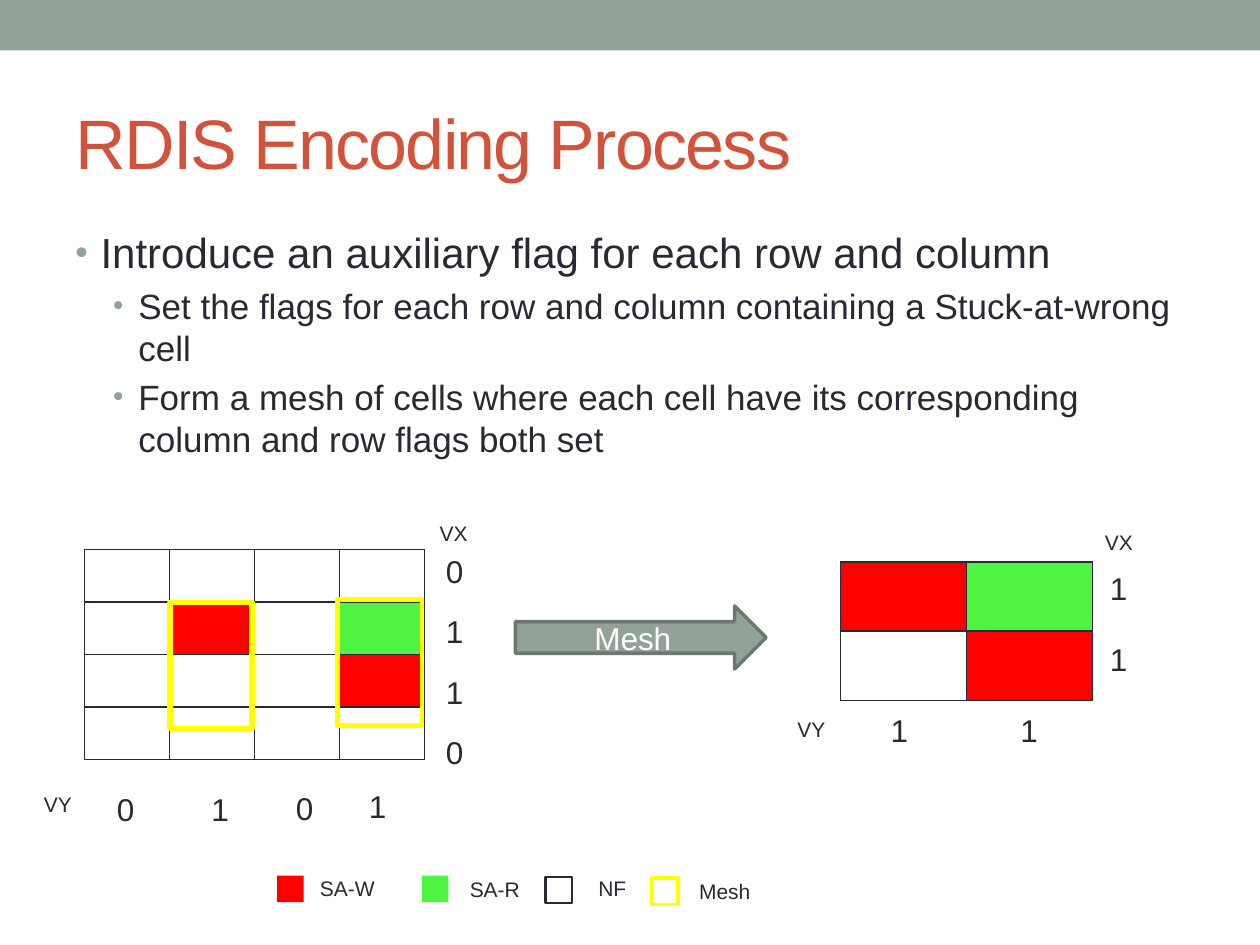
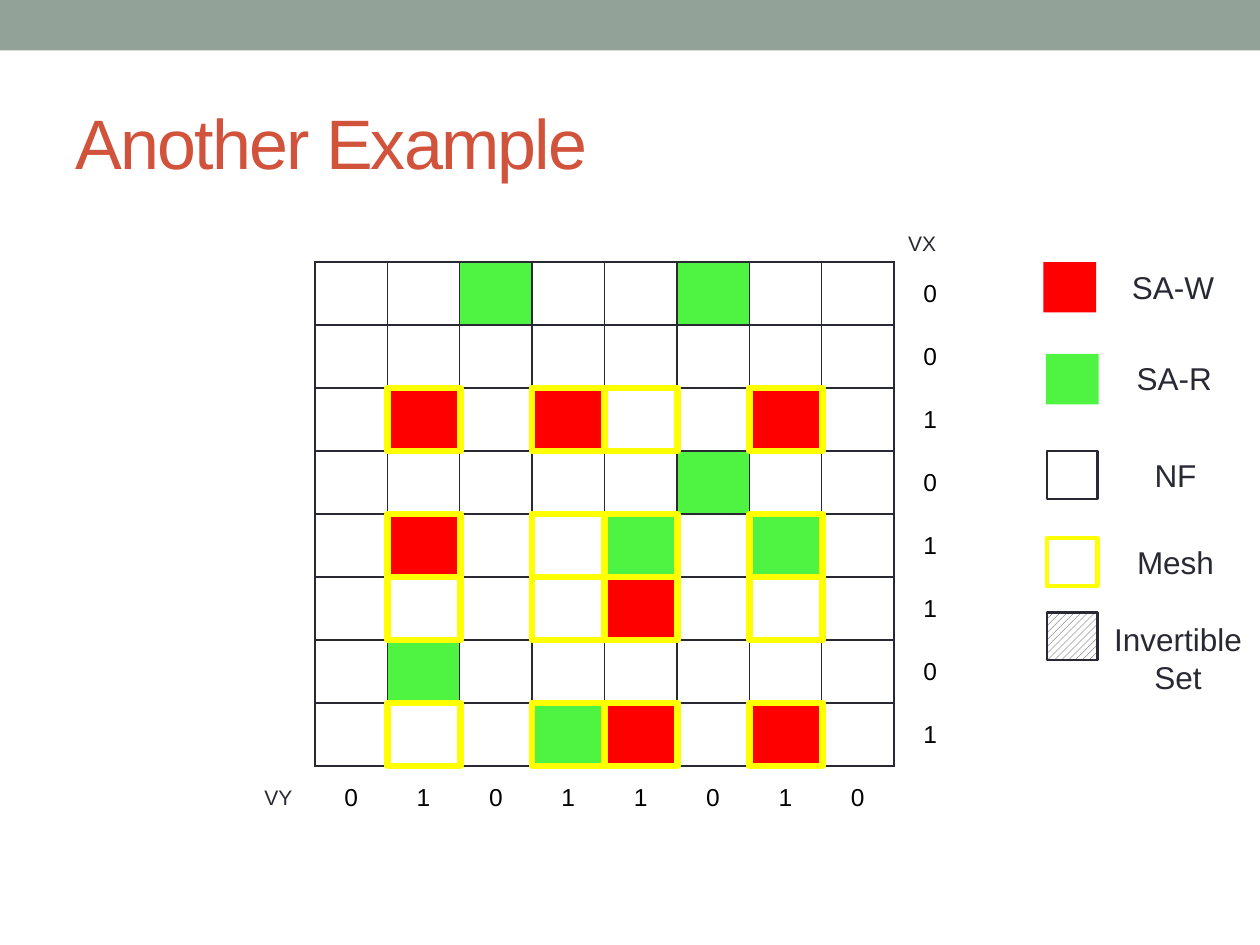
"""Builds two slides that explain how RDIS encodes stuck cells with a mesh."""
from dataclasses import dataclass
from itertools import product

from lxml.etree import SubElement
from pptx import Presentation
from pptx.dml.color import RGBColor
from pptx.enum.dml import MSO_PATTERN
from pptx.enum.shapes import MSO_SHAPE
from pptx.enum.text import MSO_ANCHOR, MSO_AUTO_SIZE, PP_ALIGN
from pptx.oxml.ns import qn
from pptx.util import Inches, Pt


@dataclass(frozen=True)
class Theme:
    font: str = "Arial"
    ink: RGBColor = RGBColor.from_string("292934")
    sage: RGBColor = RGBColor.from_string("93A299")
    sage_dark: RGBColor = RGBColor.from_string("6D7871")
    rust: RGBColor = RGBColor.from_string("D2533C")
    white: RGBColor = RGBColor.from_string("FFFFFF")
    black: RGBColor = RGBColor.from_string("000000")
    wrong: RGBColor = RGBColor.from_string("FF0000")
    right: RGBColor = RGBColor.from_string("4FF442")
    mesh: RGBColor = RGBColor.from_string("FFFF00")
    title: int = 40
    lead: int = 24
    point: int = 20
    label: int = 18
    flag: int = 14
    small: int = 12


theme = Theme()


def add_text(page, text, left, top, width, height=0.4, size=theme.label, align=PP_ALIGN.LEFT):
    """Adds a wrapped text box, one paragraph for each line, and returns its paragraphs."""
    box = page.shapes.add_textbox(Inches(left), Inches(top), Inches(width), Inches(height))
    frame = box.text_frame
    frame.word_wrap = True
    frame.text = text
    for para in frame.paragraphs:
        para.alignment = align
        para.font.name = theme.font
        para.font.size = Pt(size)
        para.font.color.rgb = theme.ink
    return frame.paragraphs


def add_block(page, left, top, width, height, fill=None, line=None, weight=1.0, kind=MSO_SHAPE.RECTANGLE):
    """Adds a flat preset shape with an optional fill and outline."""
    block = page.shapes.add_shape(kind, Inches(left), Inches(top), Inches(width), Inches(height))
    block.shadow.inherit = False
    if fill is None:
        block.fill.background()
    else:
        block.fill.solid()
        block.fill.fore_color.rgb = fill
    if line is None:
        block.line.fill.background()
    else:
        block.line.color.rgb = line
        block.line.width = Pt(weight)
    return block


deck = Presentation()
deck.slide_width, deck.slide_height = Inches(10), Inches(7.5)

pages = []
for heading in ("RDIS Encoding Process", "Another Example"):
    page = deck.slides.add_slide(deck.slide_layouts[5])
    pages.append(page)
    add_block(page, 0, 0, 10, 0.4, theme.sage)
    title = page.shapes.title
    title.left, title.top, title.width, title.height = Inches(0.5), Inches(0.58), Inches(9), Inches(1.08)
    title.text = heading
    title.text_frame.vertical_anchor = MSO_ANCHOR.MIDDLE
    title.text_frame.auto_size = MSO_AUTO_SIZE.NONE
    para = title.text_frame.paragraphs[0]
    para.alignment = PP_ALIGN.LEFT
    span = para.runs[0]
    span.font.name = theme.font
    span.font.size = Pt(theme.title)
    span.font.color.rgb = theme.rust
    span.font._element.set("spc", "-100")
process, example = pages

points = add_text(
    process,
    "Introduce an auxiliary flag for each row and column\n"
    "Set the flags for each row and column containing a Stuck-at-wrong cell\n"
    "Form a mesh of cells where each cell have its corresponding column and row flags both set",
    0.5, 1.75, 9, 2.2, theme.point,
)
points[0].font.size = Pt(theme.lead)
for index, para in enumerate(points):
    para.level = min(index, 1)
    para.space_before = Pt(para.font.size.pt * 0.2)
    props = para._p.get_or_add_pPr()
    props.set("marL", str(Inches(0.5 if para.level else 0.2)))
    props.set("indent", str(Inches(-0.2)))
    bullet_color = SubElement(props, qn("a:buClr"))
    SubElement(bullet_color, qn("a:srgbClr"), val=str(theme.sage))
    SubElement(props, qn("a:buSzPct"), val="85000")
    SubElement(props, qn("a:buFont"), typeface=theme.font)
    SubElement(props, qn("a:buChar"), char="•")
    props.append(props.find(qn("a:defRPr")))

example_cells = [
    "NNRNNRNN0",
    "NNNNNNNN0",
    "NWNWNNWN1",
    "NNNNNRNN0",
    "NWNNRNRN1",
    "NNNNWNNN1",
    "NRNNNNNN0",
    "NNNRWNWN1",
    "01011010 ",
]
grids = [
    (process, 0.67, 4.36, 2.7, 1.67, ["NNNN", "NWNR", "NNNW", "NNNN"]),
    (process, 6.67, 4.46, 2, 1.1, ["WR", "NW"]),
    (example, 2.5, 2.08, 5.17, 4.5, example_cells),
]
state_fills = {"W": theme.wrong, "R": theme.right}
for page, left, top, width, height, cells in grids:
    table = page.shapes.add_table(
        len(cells), len(cells[0]), Inches(left), Inches(top), Inches(width), Inches(height)
    ).table
    table.first_row = table.horz_banding = False
    table._tbl.tblPr.find(qn("a:tableStyleId")).text = "{2D5ABB26-0587-4C30-8999-92F81FD0307C}"
    for row, states in enumerate(cells):
        for column, state in enumerate(states):
            cell = table.cell(row, column)
            cell.vertical_anchor = MSO_ANCHOR.MIDDLE
            para = cell.text_frame.paragraphs[0]
            para.alignment = PP_ALIGN.CENTER
            para.font.name = theme.font
            para.font.size = Pt(theme.flag)
            para.font.color.rgb = theme.black
            if state in "01":
                para.text = state
            if state in "NWR":
                for side in ("a:lnL", "a:lnR", "a:lnT", "a:lnB"):
                    border = SubElement(cell._tc.get_or_add_tcPr(), qn(side), w=str(Pt(1)))
                    SubElement(SubElement(border, qn("a:solidFill")), qn("a:srgbClr"), val=str(theme.ink))
            if state in state_fills:
                cell.fill.solid()
                cell.fill.fore_color.rgb = state_fills[state]
            else:
                cell.fill.background()

flag_columns = [
    ("0110", 3.44, 4.33, 0.48),
    ("11", 8.71, 4.47, 0.56),
]
for flags, left, top, step in flag_columns:
    for index, flag in enumerate(flags):
        add_text(process, flag, left, top + index * step, 0.33)
flag_row = [("0", 0.83, 6.22), ("1", 1.58, 6.22), ("0", 2.25, 6.21), ("1", 2.83, 6.2),
            ("1", 6.97, 5.59), ("1", 8, 5.59)]
for flag, left, top in flag_row:
    add_text(process, flag, left, top, 0.33)

axis_names = [
    (process, "VX", 3.39, 4.08), (process, "VY", 0.25, 6.23),
    (process, "VX", 8.67, 4.15), (process, "VY", 6.23, 5.64),
    (example, "VX", 7.11, 1.78), (example, "VY", 2, 6.18),
]
for page, name, left, top in axis_names:
    add_text(page, name, left, top, 0.48, 0.3, theme.small)

add_block(process, 2.68, 4.76, 0.67, 1, line=theme.mesh, weight=2.75)
add_block(process, 1.35, 4.78, 0.65, 1, line=theme.mesh, weight=3)

arrow = add_block(process, 4.09, 4.81, 1.99, 0.5, theme.sage, theme.sage_dark, 2.08, MSO_SHAPE.RIGHT_ARROW)
arrow.text_frame.text = "Mesh"
arrow.text_frame.vertical_anchor = MSO_ANCHOR.MIDDLE
para = arrow.text_frame.paragraphs[0]
para.alignment = PP_ALIGN.CENTER
para.font.name = theme.font
para.font.size = Pt(theme.label)
para.font.color.rgb = theme.white

set_rows = [row for row, states in enumerate(example_cells) if states[-1] == "1"]
set_columns = [column for column, flag in enumerate(example_cells[-1]) if flag == "1"]
for row, column in product(set_rows, set_columns):
    add_block(example, 2.5 + column * 5.17 / 9, 2.08 + row * 0.5, 0.58, 0.5, line=theme.mesh, weight=3.75)

process_legend = [
    ("SA-W", 2.2, 6.95, 2.44, 6.9, theme.wrong, None, 0),
    ("SA-R", 3.35, 6.95, 3.63, 6.91, theme.right, None, 0),
    ("NF", 4.33, 6.96, 4.65, 6.9, theme.white, theme.ink, 1.25),
    ("Mesh", 5.17, 6.97, 5.45, 6.92, theme.white, theme.mesh, 2.08),
]
for name, left, top, text_left, text_top, fill, line, weight in process_legend:
    add_block(process, left, top, 0.21, 0.21, fill, line, weight)
    add_text(process, name, text_left, text_top, 1.02, 0.3, theme.small)

example_legend = [
    ("SA-W", 8.28, 2.08, 0.42, 0.4, 8.66, 2.08, theme.wrong, None, 0),
    ("SA-R", 8.3, 2.81, 0.42, 0.4, 8.67, 2.8, theme.right, None, 0),
    ("NF", 8.31, 3.58, 0.4, 0.38, 8.68, 3.57, theme.white, theme.ink, 1.5),
    ("Mesh", 8.31, 4.27, 0.4, 0.38, 8.68, 4.26, theme.white, theme.mesh, 2.5),
    ("Invertible Set", 8.31, 4.86, 0.4, 0.38, 8.7, 4.87, theme.white, theme.ink, 1.5),
]
for name, left, top, width, height, text_left, text_top, fill, line, weight in example_legend:
    swatch = add_block(example, left, top, width, height, fill, line, weight)
    add_text(example, name, text_left, text_top, 1.3, align=PP_ALIGN.CENTER)
swatch.fill.patterned()
swatch.fill.pattern = MSO_PATTERN.WIDE_UPWARD_DIAGONAL
swatch.fill.fore_color.rgb = theme.ink
swatch.fill.back_color.rgb = theme.white

deck.save("out.pptx")
